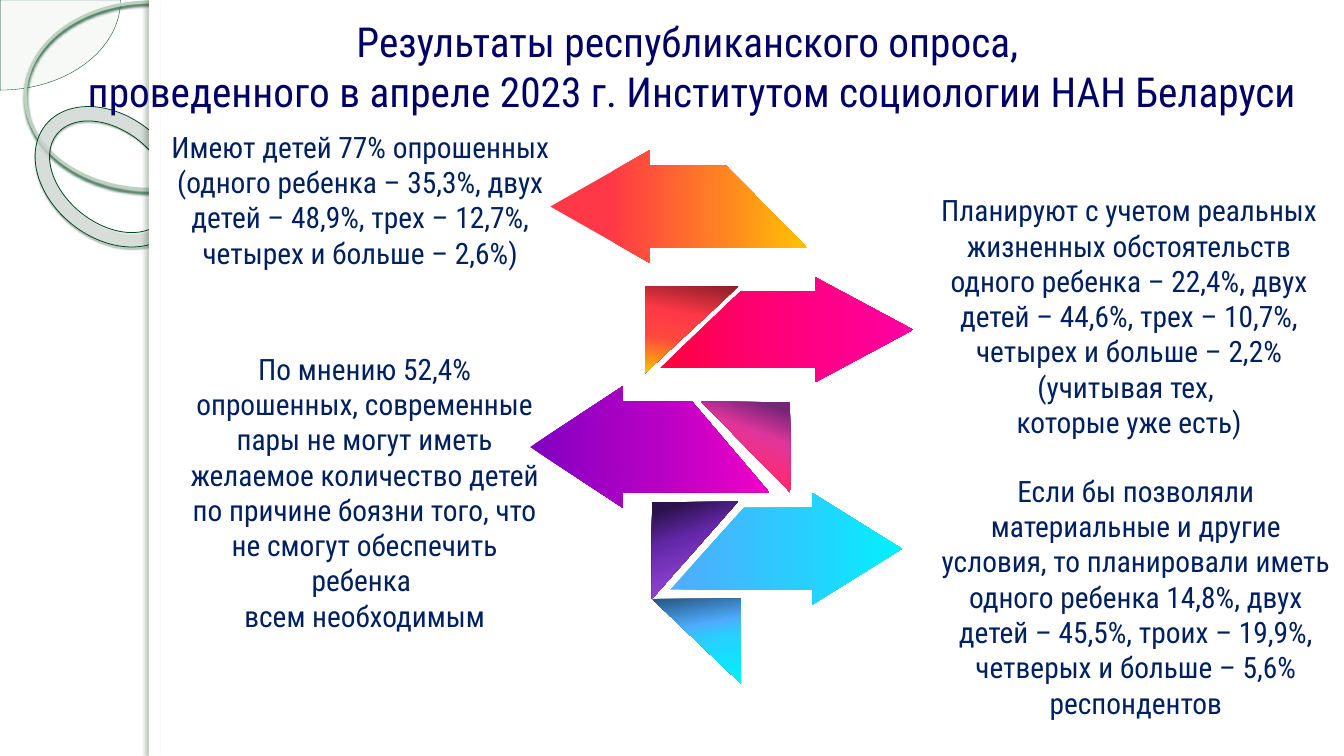
from lxml import etree
from pptx import Presentation
from pptx.dml.color import RGBColor
from pptx.enum.shapes import MSO_SHAPE as Preset
from pptx.enum.text import MSO_AUTO_SIZE as AutoSize, PP_ALIGN as Align
from pptx.oxml.ns import qn
from pptx.util import Cm, Pt

FONT = "Roboto Condensed"
WIDTH, HEIGHT = 33.87, 19.05

# Lengths are in centimetres. Shadow: colour, opacity %, blur pt, distance pt, angle.
DECOR = [
    dict(preset=Preset.PIE, at=(-3.03, -2.27, 6.07, 4.54), adjust=(0, 54.02),
         fill=("E9EDE9", 33), line=("004B22", 0.25)),
    dict(preset=Preset.OVAL, at=(0.64, 0.05, 6.3, 4.72),
         line=("BED1C1", 2.15), shadow=("00411E", 85, 2, 2, 90)),
    dict(preset=Preset.DONUT, at=(0.69, 2.92, 4.17, 3.07), adjust=(0.12,), turn=38.6,
         fill=("E1E6E2", 70), line=("004620", 0.58), shadow=("00200F", 35, 1, 1.2, 75)),
    dict(preset=Preset.RECTANGLE, at=(3.76, 0, 30.11, HEIGHT), fill=("FFFFFF", 100)),
    dict(preset=Preset.RECTANGLE, at=(3.76, 0, 0.28, HEIGHT), fill=("FFFFFF", 100),
         shadow=("002C14", 25, 3, 3, 180)),
]

# Arrow: tip x, head x, head top and bottom, shaft top and bottom,
# tail x at top and bottom, gradient stops from left to right
ARROWS = [
    (13.87, 16.38, (3.78, 6.63), (4.17, 6.25), (18.29, 20.35),
     [(23, "FF3847"), (63, "FF7D25"), (100, "FFC203")]),
    (23.01, 20.55, (6.99, 9.63), (7.34, 9.27), (18.67, 16.64),
     [(2, "FF0040"), (37, "FF0071"), (99, "FF00A2")]),
    (13.36, 15.7, (9.73, 12.8), (10.13, 12.4), (17.45, 19.38),
     [(0, "8000C2"), (53, "B800C4"), (100, "F000C6")]),
    (22.73, 20.47, (12.42, 15.24), (12.8, 14.86), (18.75, 16.89),
     [(2, "4FACFE"), (58, "28CFFE"), (100, "00F2FE")]),
]

# Fold: x of the upright side, x of the far corner, top, bottom, angle,
# gradient stops from top to bottom
FOLDS = [
    (16.26, 18.62, 7.21, 9.4, 100,
     [(0, "8B1F28"), (36, "FF3847"), (62, "FF4740"), (100, "FFC203")]),
    (19.91, 17.68, 10.13, 12.4, 110,
     [(8, "752679"), (35, "E1359B"), (71, "FF2A70")]),
    (16.43, 18.59, 12.65, 15.09, 70,
     [(9, "2C124C"), (37, "6428AA"), (66, "863DC8"), (100, "A852E6")]),
    (18.67, 16.43, 15.09, 17.22, 80,
     [(0, "275580"), (34, "4FACFE"), (49, "28CFFE"), (100, "00F2FE")]),
]

TITLE = ("Результаты республиканского опроса, \n"
         "проведенного в апреле 2023 г. Институтом социологии НАН Беларуси")
TITLE_FORMAT = dict(size=29.5, color="000066", inset=0.25)
BODY_FORMAT = dict(size=21, color="002060", inset=0.13)
TEXTS = [
    ((1.04, 0.28, 32.82, 2.77), TITLE, TITLE_FORMAT),
    ((3.76, 3.12, 10.64, 3.84),
     "Имеют детей 77% опрошенных (одного ребенка – 35,3%, двух детей – 48,9%, "
     "трех – 12,7%, четырех и больше – 2,6%)", BODY_FORMAT),
    ((23.39, 4.72, 10.13, 6.53),
     "Планируют с учетом реальных жизненных обстоятельств одного ребенка – 22,4%, "
     "двух детей – 44,6%, трех – 10,7%, четырех и больше – 2,2% (учитывая тех, \n"
     "которые уже есть)", BODY_FORMAT),
    ((4.39, 8.71, 9.6, 7.44),
     "По мнению 52,4% опрошенных, современные пары не могут иметь желаемое "
     "количество детей по причине боязни того, что не смогут обеспечить ребенка \n"
     "всем необходимым", BODY_FORMAT),
    ((23.52, 11.79, 10.21, 6.53),
     "Если бы позволяли материальные и другие условия, то планировали иметь одного "
     "ребенка 14,8%, двух детей – 45,5%, троих – 19,9%, четверых и больше – 5,6% "
     "респондентов", BODY_FORMAT),
]


def rgb(code):
    return RGBColor.from_string(code)


def node(parent, tag, **attributes):
    """Append a DrawingML element to parent."""
    return etree.SubElement(parent, qn("a:" + tag),
                            {key: str(value) for key, value in attributes.items()})


def add_shadow(shape, color, opacity, blur, distance, angle):
    effects = shape._element.spPr.find(qn("a:effectLst"))
    shadow = node(effects, "outerShdw", blurRad=Pt(blur), dist=Pt(distance),
                  dir=angle * 60000, algn="ctr", rotWithShape=0)
    node(node(shadow, "srgbClr", val=color), "alpha", val=opacity * 1000)


def add_decor(page, preset, at, adjust=(), turn=0, fill=None, line=None, shadow=None):
    shape = page.shapes.add_shape(preset, *map(Cm, at))
    shape.shadow.inherit = False
    shape.rotation = turn
    for index, value in enumerate(adjust):
        shape.adjustments[index] = value
    if fill:
        color, opacity = fill
        shape.fill.solid()
        shape.fill.fore_color.rgb = rgb(color)
        if opacity < 100:
            tint = shape._element.spPr.find(qn("a:solidFill"))[0]
            node(tint, "alpha", val=opacity * 1000)
    else:
        shape.fill.background()
    if line:
        shape.line.color.rgb, shape.line.width = rgb(line[0]), Pt(line[1])
    else:
        shape.line.fill.background()
    if shadow:
        add_shadow(shape, *shadow)


def add_outline(page, points, stops, angle):
    """Draw a closed polygon filled with a linear gradient."""
    start, *others = [(Cm(x), Cm(y)) for x, y in points]
    builder = page.shapes.build_freeform(*start)
    builder.add_line_segments(others, close=True)
    shape = builder.convert_to_shape()
    shape.shadow.inherit = False
    shape.line.fill.background()
    shape.fill.gradient()
    gradient = shape._element.spPr.find(qn("a:gradFill"))
    for child in list(gradient):
        gradient.remove(child)
    stop_list = node(gradient, "gsLst")
    for position, color in stops:
        node(node(stop_list, "gs", pos=position * 1000), "srgbClr", val=color)
    node(gradient, "lin", ang=angle * 60000, scaled=0)


def add_arrow(page, tip, head, head_span, shaft_span, tails, stops):
    (top, bottom), (upper, lower) = head_span, shaft_span
    points = [(head, top), (tip, (top + bottom) / 2), (head, bottom), (head, lower),
              (tails[1], lower), (tails[0], upper), (head, upper)]
    add_outline(page, points, stops, 0)


def add_text(page, at, text, style):
    box = page.shapes.add_textbox(*map(Cm, at))
    frame = box.text_frame
    inset = Cm(style["inset"])
    settings = dict(word_wrap=True, auto_size=AutoSize.SHAPE_TO_FIT_TEXT,
                    margin_left=inset, margin_right=inset,
                    margin_top=Cm(0.13), margin_bottom=Cm(0.13))
    for name, value in settings.items():
        setattr(frame, name, value)
    para = frame.paragraphs[0]
    para.text, para.alignment = text, Align.CENTER
    for span in para.runs:
        for name, value in dict(name=FONT, size=Pt(style["size"])).items():
            setattr(span.font, name, value)
        span.font.color.rgb = rgb(style["color"])


def main():
    deck = Presentation()
    deck.slide_width, deck.slide_height = Cm(WIDTH), Cm(HEIGHT)
    page = deck.slides.add_slide(deck.slide_layouts[6])
    for decor in DECOR:
        add_decor(page, **decor)
    for side, corner, top, bottom, angle, stops in FOLDS:
        add_outline(page, [(side, top), (side, bottom), (corner, top)], stops, angle)
    for arrow in ARROWS:
        add_arrow(page, *arrow)
    for at, text, style in TEXTS:
        add_text(page, at, text, style)
    deck.save("out.pptx")


if __name__ == "__main__":
    main()
